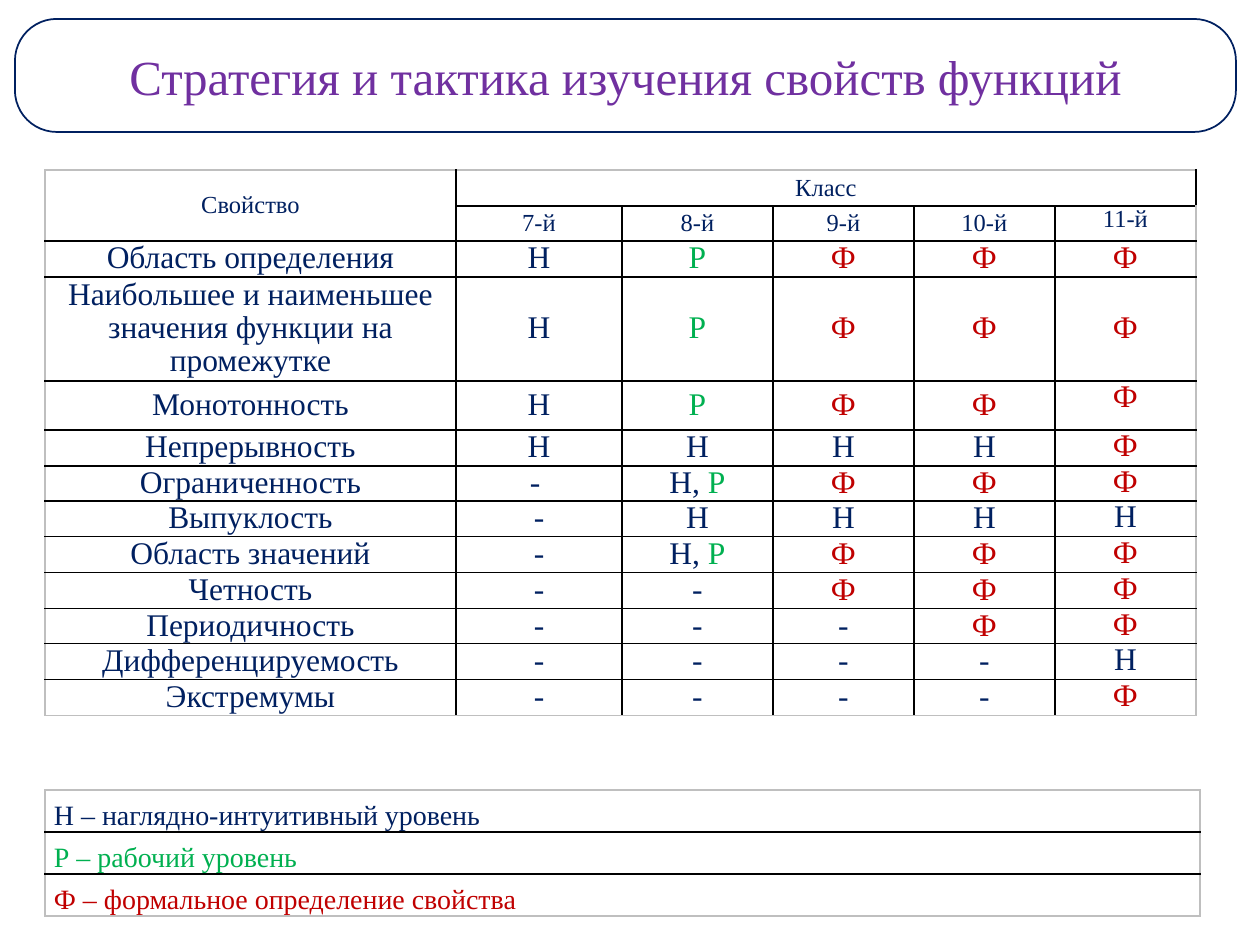
from dataclasses import dataclass

from lxml import etree
from pptx import Presentation
from pptx import util as u
from pptx.dml.color import RGBColor
from pptx.enum import shapes, text
from pptx.oxml.ns import qn

EMU_PER_PX = 914400 / 126
FONT = "Times New Roman"
NAVY, GREEN, RED, PURPLE = "002060", "00B050", "C00000", "7030A0"
BLACK, GRAY, WHITE = "000000", "BFBFBF", "FFFFFF"
LEVEL_COLORS = {"Н": NAVY, "Р": GREEN, "Ф": RED}
MIDDLE, TOP, BOTTOM = (text.MSO_ANCHOR.MIDDLE, text.MSO_ANCHOR.TOP,
                       text.MSO_ANCHOR.BOTTOM)
CENTER, LEFT = text.PP_ALIGN.CENTER, text.PP_ALIGN.LEFT


@dataclass
class Box:
    left: int
    top: int
    width: int
    height: int

    def emu(self) -> list:
        return [px(value) for value in (self.left, self.top, self.width, self.height)]


@dataclass
class Grid:
    left: int
    top: int
    columns: list
    rows: list


@dataclass
class Run:
    words: str
    color: str = NAVY


@dataclass
class Property:
    name: str
    levels: list


GRADES = ["7-й", "8-й", "9-й", "10-й", "11-й"]
PROPERTIES = [
    Property("Область определения", ["Н", "Р", "Ф", "Ф", "Ф"]),
    Property("Наибольшее и наименьшее значения функции на промежутке",
             ["Н", "Р", "Ф", "Ф", "Ф"]),
    Property("Монотонность", ["Н", "Р", "Ф", "Ф", "Ф"]),
    Property("Непрерывность", ["Н", "Н", "Н", "Н", "Ф"]),
    Property("Ограниченность", ["- ", "Н, Р", "Ф", "Ф", "Ф"]),
    Property("Выпуклость", ["-", "Н", "Н", "Н", "Н"]),
    Property("Область значений", ["-", "Н, Р", "Ф", "Ф", "Ф"]),
    Property("Четность", ["-", "-", "Ф", "Ф", "Ф"]),
    Property("Периодичность", ["-", "-", "-", "Ф", "Ф"]),
    Property("Дифференцируемость", ["-", "-", "-", "-", "Н"]),
    Property("Экстремумы", ["-", "-", "-", "-", "Ф"]),
]
LEGEND = ["Н – наглядно-интуитивный уровень", "Р – рабочий уровень",
          "Ф – формальное определение свойства"]
PROPERTY_GRID = Grid(45, 170, [411, 166, 151, 141, 141, 141],
                     [36, 35, 36, 104, 49, 36, 35, 36, 36, 36, 35, 36, 36])
LEGEND_GRID = Grid(45, 790, [1155], [42] * 3)


def px(value: int) -> u.Emu:
    return u.Emu(round(value * EMU_PER_PX))


def color(value: str) -> RGBColor:
    return RGBColor.from_string(value)


def set_attributes(target, values: dict) -> None:
    for name, value in values.items():
        setattr(target, name, value)


def write(frame, runs: list, size: int, alignment, spacing: float = 1.0) -> None:
    paragraph = frame.paragraphs[0]
    set_attributes(paragraph, {"alignment": alignment, "line_spacing": spacing})
    for item in runs:
        run = paragraph.add_run()
        run.text = item.words
        set_attributes(run.font, {"name": FONT, "size": u.Pt(size)})
        run.font.color.rgb = color(item.color)


def level_runs(levels: str) -> list:
    if ", " in levels:
        first, second = levels.split(", ")
        return [Run(first + ", ", LEVEL_COLORS[first]), Run(second, LEVEL_COLORS[second])]
    return [Run(levels, LEVEL_COLORS.get(levels, NAVY))]


def add_border(cell, side: str, line_color: str) -> None:
    line = etree.SubElement(cell._tc.get_or_add_tcPr(), qn(f"a:ln{side}"),
                            w=str(u.Pt(1)))
    fill = etree.SubElement(line, qn("a:solidFill"))
    etree.SubElement(fill, qn("a:srgbClr"), val=line_color)


def add_grid(slide, grid: Grid):
    box = Box(grid.left, grid.top, sum(grid.columns), sum(grid.rows))
    table = slide.shapes.add_table(len(grid.rows), len(grid.columns), *box.emu()).table
    set_attributes(table, {"first_row": False, "horz_banding": False})
    for column, width in zip(table.columns, grid.columns):
        column.width = px(width)
    last_row, last_column = len(grid.rows) - 1, len(grid.columns) - 1
    for row_index, height in enumerate(grid.rows):
        table.rows[row_index].height = px(height)
        for column_index in range(len(grid.columns)):
            cell = table.cell(row_index, column_index)
            outer = {"L": column_index == 0, "R": column_index == last_column,
                     "T": row_index == 0, "B": row_index == last_row}
            for side, is_outer in outer.items():
                add_border(cell, side, GRAY if is_outer else BLACK)
            cell.fill.background()
            set_attributes(cell, {"margin_left": px(9), "margin_right": px(9),
                                  "margin_top": 0, "margin_bottom": 0,
                                  "vertical_anchor": MIDDLE})
    return table


def add_property_table(slide) -> None:
    table = add_grid(slide, PROPERTY_GRID)
    table.cell(0, 0).merge(table.cell(1, 0))
    table.cell(0, 1).merge(table.cell(0, len(GRADES)))
    write(table.cell(0, 0).text_frame, [Run("Свойство")], 14, CENTER)
    write(table.cell(0, 1).text_frame, [Run("Класс")], 14, CENTER)
    for column, grade in enumerate(GRADES, 1):
        write(table.cell(1, column).text_frame, [Run(grade)], 14, CENTER)
    for row, item in enumerate(PROPERTIES, 2):
        write(table.cell(row, 0).text_frame, [Run(item.name)], 18, CENTER, 0.95)
        for column, levels in enumerate(item.levels, 1):
            write(table.cell(row, column).text_frame, level_runs(levels), 18, CENTER, 0.95)
    for row in [1, *range(4, len(PROPERTY_GRID.rows))]:
        table.cell(row, len(GRADES)).vertical_anchor = TOP


def add_legend(slide) -> None:
    table = add_grid(slide, LEGEND_GRID)
    for row, entry in enumerate(LEGEND):
        cell = table.cell(row, 0)
        cell.vertical_anchor = BOTTOM
        write(cell.text_frame, [Run(entry, LEVEL_COLORS[entry[0]])], 16, LEFT)


def add_title(slide) -> None:
    shape = slide.shapes.add_shape(shapes.MSO_SHAPE.ROUNDED_RECTANGLE,
                                   *Box(15, 19, 1221, 113).emu())
    shape.shadow.inherit = False
    shape.adjustments[0] = 0.37
    shape.fill.solid()
    shape.fill.fore_color.rgb = color(WHITE)
    shape.line.color.rgb = color(NAVY)
    shape.line.width = u.Pt(1)
    set_attributes(shape.text_frame, {
        "word_wrap": True, "vertical_anchor": MIDDLE,
        "margin_left": px(35), "margin_right": px(35),
        "margin_top": px(15), "margin_bottom": px(15)})
    write(shape.text_frame,
          [Run("Стратегия и тактика изучения свойств функций", PURPLE)], 28, CENTER)


def main() -> None:
    presentation = Presentation()
    set_attributes(presentation, {"slide_width": px(1260), "slide_height": px(945)})
    slide = presentation.slides.add_slide(presentation.slide_layouts[6])
    add_property_table(slide)
    add_legend(slide)
    add_title(slide)
    presentation.save("out.pptx")


if __name__ == "__main__":
    main()
